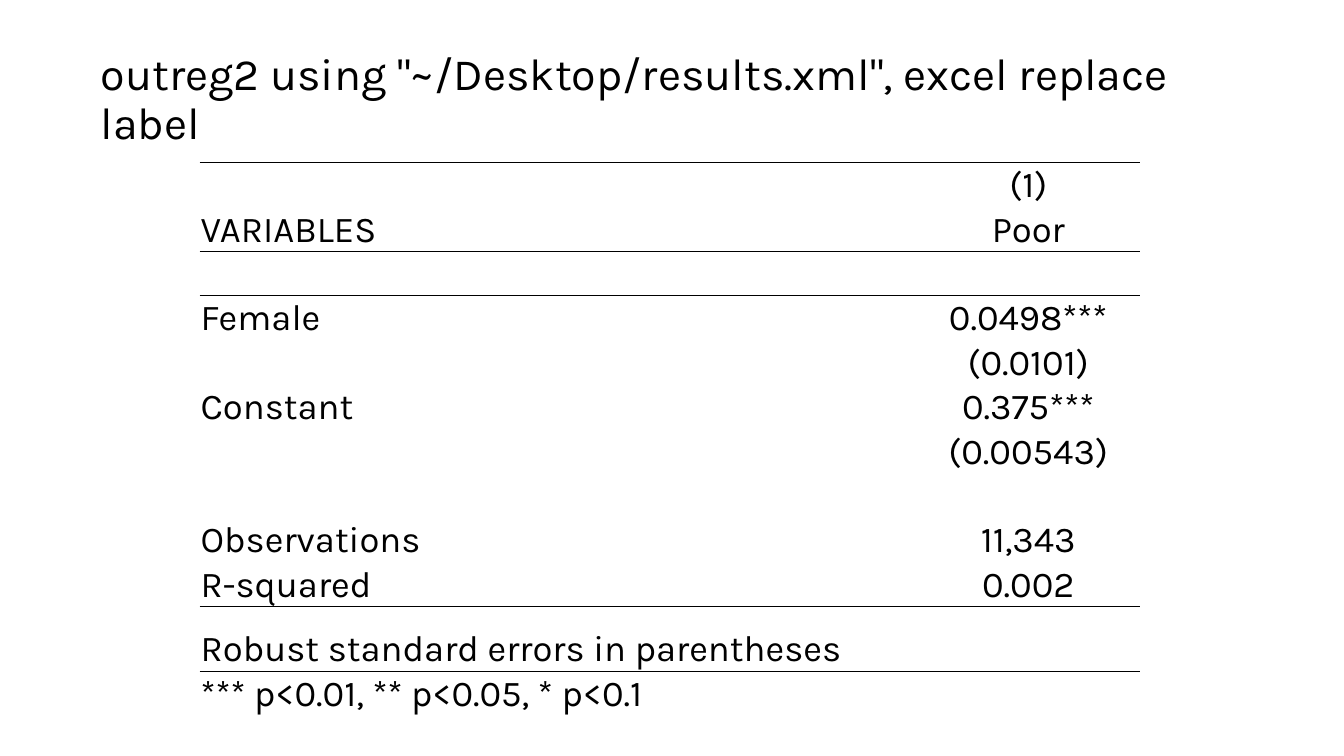
from lxml import etree
from pptx import Presentation
from pptx.dml.color import RGBColor
from pptx.enum.text import MSO_ANCHOR, PP_ALIGN
from pptx.oxml.ns import qn
from pptx.util import Inches, Pt

MIDDLE = MSO_ANCHOR.MIDDLE
BOTTOM = MSO_ANCHOR.BOTTOM
LEFT = PP_ALIGN.LEFT
CENTER = PP_ALIGN.CENTER
FONT = "Karla"
COLORS = {"ink": "000000"}
PLAIN = "{2D5ABB26-0587-4C30-8999-92F81FD0307C}"
ROWS = [
    ("", "(1)"),
    ("VARIABLES", "Poor"),
    ("", ""),
    ("Female", "0.0498***"),
    ("", "(0.0101)"),
    ("Constant", "0.375***"),
    ("", "(0.00543)"),
    ("", ""),
    ("Observations", "11,343"),
    ("R-squared", "0.002"),
    ("Robust standard errors in parentheses", ""),
    ("*** p<0.01, ** p<0.05, * p<0.1", ""),
]
RULES = (0, 2, 10)
NOTE = 10


def style(para, size):
    for run in para.runs:
        run.font.name = FONT
        run.font.size = Pt(size)
        run.font.color.rgb = RGBColor.from_string(COLORS["ink"])


def add_title(slide, text):
    box = slide.shapes.add_textbox(Inches(0.9), Inches(0.27), Inches(11.5), Inches(1.45))
    frame = box.text_frame
    frame.word_wrap = True
    frame.vertical_anchor = MIDDLE
    frame.text = text
    para = frame.paragraphs[0]
    para.line_spacing = 0.9
    style(para, 32)


def add_border(cell, tag):
    line = etree.SubElement(cell._tc.get_or_add_tcPr(), qn(tag), w=str(Pt(0.5)))
    fill = etree.SubElement(line, qn("a:solidFill"))
    etree.SubElement(fill, qn("a:srgbClr"), val=COLORS["ink"])


def fill_cell(cell, text, align, row):
    cell.margin_left = cell.margin_right = cell.margin_top = Inches(0.01)
    cell.margin_bottom = 0
    cell.vertical_anchor = BOTTOM
    if row in RULES:
        add_border(cell, "a:lnT")
    if row + 1 in RULES:
        add_border(cell, "a:lnB")
    cell.fill.background()
    cell.text = text
    para = cell.text_frame.paragraphs[0]
    para.alignment = align
    style(para, 26)


def add_results(slide):
    frame = slide.shapes.add_table(
        len(ROWS), 2, Inches(1.98), Inches(1.61), Inches(9.33), Inches(5.37))
    table = frame.table
    table.first_row = False
    table.horz_banding = False
    table._tbl.tblPr.find(qn("a:tableStyleId")).text = PLAIN
    for col, width in zip(table.columns, (7.11, 2.22)):
        col.width = Inches(width)
    for row, texts in enumerate(ROWS):
        table.rows[row].height = Inches(0.64 if row == NOTE else 0.43)
        for col, (text, align) in enumerate(zip(texts, (LEFT, CENTER))):
            fill_cell(table.cell(row, col), text, align, row)


def main():
    deck = Presentation()
    deck.slide_width = Inches(13.33)
    deck.slide_height = Inches(7.5)
    slide = deck.slides.add_slide(deck.slide_layouts[6])
    add_title(slide, 'outreg2 using "~/Desktop/results.xml", excel replace label')
    add_results(slide)
    deck.save("out.pptx")


if __name__ == "__main__":
    main()
